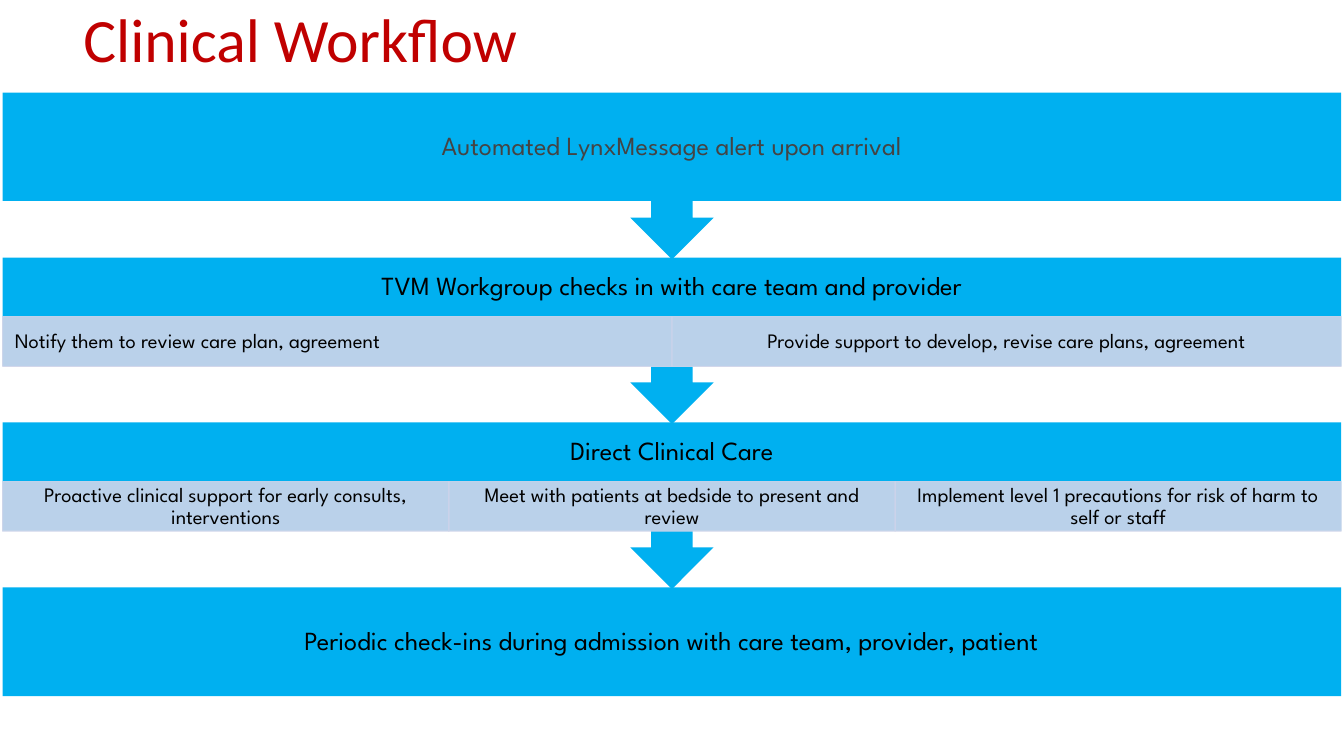
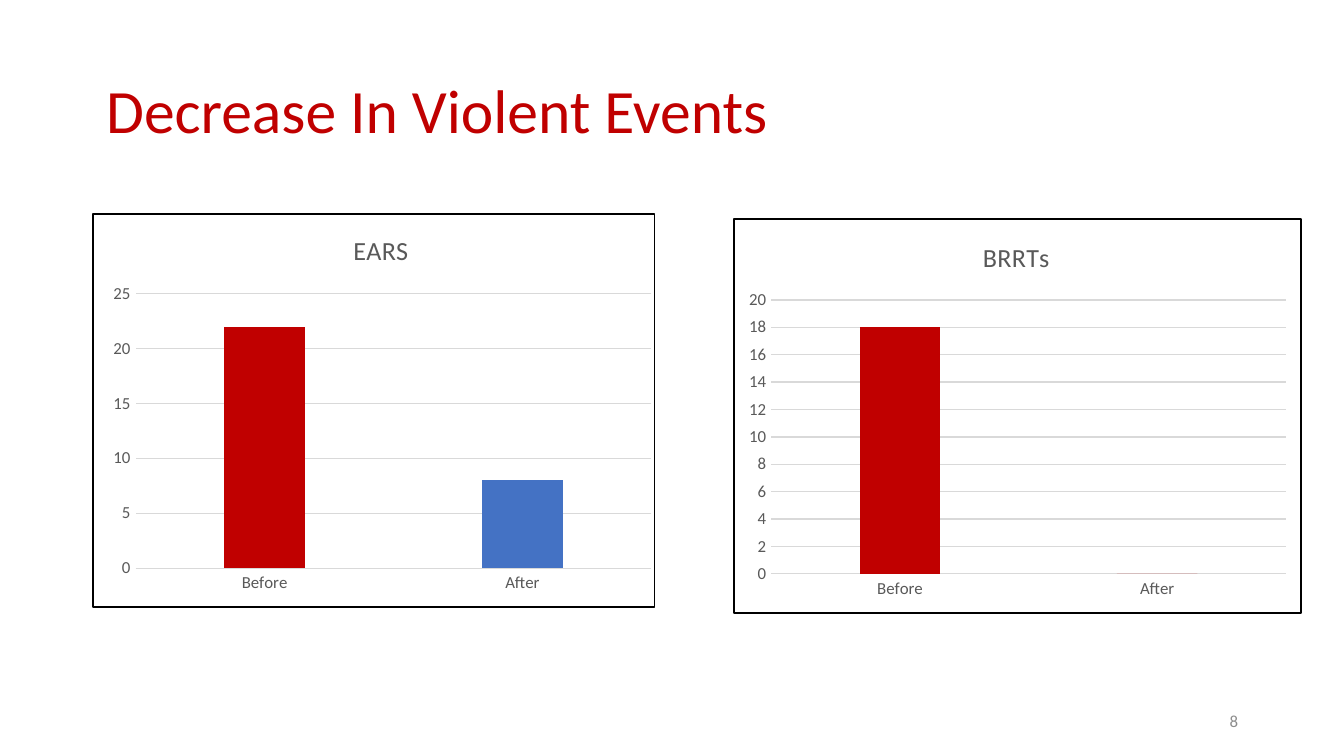
from lxml import etree
from pptx import Presentation
from pptx.chart.data import CategoryChartData
from pptx.dml.color import RGBColor
from pptx.enum.chart import XL_CHART_TYPE, XL_TICK_MARK
from pptx.enum.shapes import MSO_SHAPE
from pptx.enum.text import MSO_ANCHOR, PP_ALIGN
from pptx.oxml.ns import qn
from pptx.util import Inches, Pt

RECT, CALLOUT = MSO_SHAPE.RECTANGLE, MSO_SHAPE.DOWN_ARROW_CALLOUT
LEFT, CENTER, RIGHT = PP_ALIGN.LEFT, PP_ALIGN.CENTER, PP_ALIGN.RIGHT
MIDDLE = MSO_ANCHOR.MIDDLE
COLUMNS, NO_TICK = XL_CHART_TYPE.COLUMN_CLUSTERED, XL_TICK_MARK.NONE

RED, SKY, PALE, BLUE = "C00000", "00B0F0", "CFD5EA", "4472C4"
BLACK, WHITE, DARK, GRAY, GRID, PAGE = (
    "000000", "FFFFFF", "444444", "595959", "D9D9D9", "8C8C8C")
BODY, STEP = "Calibri", "League Spartan"

# Content: workflow steps as (heading, colour, [(detail, alignment)])
WORKFLOW_TITLE = "Clinical Workflow"
STEPS = [
    ("Automated LynxMessage alert upon arrival", DARK, []),
    ("TVM Workgroup checks in with care team and provider", BLACK, [
        ("Notify them to review care plan, agreement", LEFT),
        ("Provide support to develop, revise care plans, agreement", CENTER)]),
    ("Direct Clinical Care", BLACK, [
        ("Proactive clinical support for early consults, interventions", CENTER),
        ("Meet with patients at bedside to present and review", CENTER),
        ("Implement level 1 precautions for risk of harm to self or staff", CENTER)]),
    ("Periodic check-ins during admission with care team, provider, patient",
     BLACK, []),
]

# Content: charts with their frames, value axis and bar colours
EVENTS_TITLE = "Decrease In Violent Events"
PAGE_NUMBER = "8"
PERIODS = ["Before", "After"]
CHARTS = [
    dict(title="EARS", title_x=0.44, values=[22, 8], colors=[RED, BLUE],
         top=25, unit=5, frame=(0.69, 1.59, 4.18, 2.93), at=(0.76, 1.58, 4.17, 2.88)),
    dict(title="BRRTs", title_x=0.43, values=[18, 0], colors=[RED, RED],
         top=20, unit=2, frame=(5.46, 1.63, 4.22, 2.93), at=(5.49, 1.63, 4.16, 2.87)),
]

# Workflow geometry
STEP_X, STEP_W = 0.02, 9.96
FIRST_Y, LAST_Y = 0.69, 4.37
BOX_H, CALLOUT_H, HEAD_H, DETAIL_H = 0.81, 1.24, 0.44, 0.37


def rgb(color):
    return RGBColor.from_string(color)


def box(values):
    return [Inches(v) for v in values]


def style_font(font, size, color, name=BODY):
    font.size, font.name, font.bold = Pt(size), name, False
    font.color.rgb = rgb(color)


def write(tf, text, size, color, name=BODY, align=LEFT, spacing=0.9):
    tf.word_wrap, tf.vertical_anchor = True, MIDDLE
    p = tf.paragraphs[0]
    p.text, p.alignment, p.line_spacing = text, align, spacing
    style_font(p.font, size, color, name)


def set_insets(tf, x, top, bottom):
    tf.margin_left = tf.margin_right = Inches(x)
    tf.margin_top, tf.margin_bottom = Inches(top), Inches(bottom)


def add_slide(prs, title, at):
    s = prs.slides.add_slide(prs.slide_layouts[5])
    sp = s.shapes.title
    sp.left, sp.top, sp.width, sp.height = box(at)
    write(sp.text_frame, title, 33, RED)
    return s


def add_block(s, kind, at, fill, line=None, width=1):
    sp = s.shapes.add_shape(kind, *box(at))
    sp.shadow.inherit = False
    sp.fill.solid()
    sp.fill.fore_color.rgb = rgb(fill)
    if line:
        sp.line.color.rgb, sp.line.width = rgb(line), Pt(width)
    else:
        sp.line.fill.background()
    return sp


def add_step(s, y, heading, color, details, last):
    kind, height = (RECT, BOX_H) if last else (CALLOUT, CALLOUT_H)
    sp = add_block(s, kind, (STEP_X, y, STEP_W, height), SKY)
    write(sp.text_frame, heading, 14, color, STEP, CENTER)
    set_insets(sp.text_frame, 0.11, 0.05, 0.05 + (BOX_H - HEAD_H if details else 0))

    # Equal detail cells under the heading
    for i, (text, align) in enumerate(details):
        w = STEP_W / len(details)
        cell = add_block(s, RECT, (STEP_X + i * w, y + HEAD_H, w, DETAIL_H),
                         PALE, PALE, 0.5)
        for clr in cell._element.spPr.xpath(".//a:srgbClr"):
            etree.SubElement(clr, qn("a:alpha"), val="90000")
        write(cell.text_frame, text, 11, BLACK, STEP, align)
        set_insets(cell.text_frame, 0.09, 0.02, 0.02)


def set_layout(parent, index, **parts):
    for old in parent.findall(qn("c:layout")):
        parent.remove(old)
    layout = etree.Element(qn("c:layout"))
    manual = etree.SubElement(layout, qn("c:manualLayout"))
    for tag, val in parts.items():
        etree.SubElement(manual, qn("c:" + tag), val=str(val))
    parent.insert(index, layout)


def add_events_chart(s, spec):
    data = CategoryChartData()
    data.categories = PERIODS
    data.add_series("Series 1", spec["values"])
    chart = s.shapes.add_chart(COLUMNS, *box(spec["at"]), data).chart
    chart.has_legend = False
    style_font(chart.font, 10, BLACK)

    # Title
    chart.has_title = True
    p = chart.chart_title.text_frame.paragraphs[0]
    p.text = spec["title"]
    style_font(p.font, 14, GRAY)
    chart.chart_title.include_in_layout = False

    # Bars
    plot = chart.plots[0]
    plot.gap_width, plot.overlap, plot.vary_by_categories = 219, -27, False
    for i, color in enumerate(spec["colors"]):
        fill = plot.series[0].points[i].format.fill
        fill.solid()
        fill.fore_color.rgb = rgb(color)

    # Axes
    cat, val = chart.category_axis, chart.value_axis
    for axis in (cat, val):
        axis.major_tick_mark = axis.minor_tick_mark = NO_TICK
        style_font(axis.tick_labels.font, 9, GRAY)
    val.minimum_scale, val.maximum_scale = 0, spec["top"]
    val.major_unit = spec["unit"]
    val.format.line.fill.background()
    for line in (cat.format.line, val.major_gridlines.format.line):
        line.color.rgb, line.width = rgb(GRID), Pt(0.75)

    # Fixed places of title and plot
    title, area = chart._chartSpace.xpath("c:chart/c:title | c:chart/c:plotArea")
    set_layout(title, 1, xMode="edge", yMode="edge", x=spec["title_x"], y=0.04)
    set_layout(area, 0, layoutTarget="inner", xMode="edge", yMode="edge",
               x=0.06, y=0.21, w=0.92, h=0.71)


def main():
    prs = Presentation()
    prs.slide_width = Inches(10)
    prs.slide_height = prs.slide_width * 9 // 16

    # Workflow, built upwards so each arrow lies over the next step
    s = add_slide(prs, WORKFLOW_TITLE, (0.52, 0.07, 7.31, 0.5))
    last = len(STEPS) - 1
    pitch = (LAST_Y - FIRST_Y) / last
    for i, step in reversed(list(enumerate(STEPS))):
        add_step(s, FIRST_Y + i * pitch, *step, last=i == last)

    # Violent events before and after
    s = add_slide(prs, EVENTS_TITLE, (0.69, 0.3, 8.62, 1.09))
    for spec in CHARTS:
        add_block(s, RECT, spec["frame"], WHITE, BLACK)
    for spec in CHARTS:
        add_events_chart(s, spec)
    number = s.shapes.add_textbox(*box((7.06, 5.21, 2.25, 0.3)))
    write(number.text_frame, PAGE_NUMBER, 9, PAGE, align=RIGHT, spacing=1.0)

    prs.save("out.pptx")


if __name__ == "__main__":
    main()
